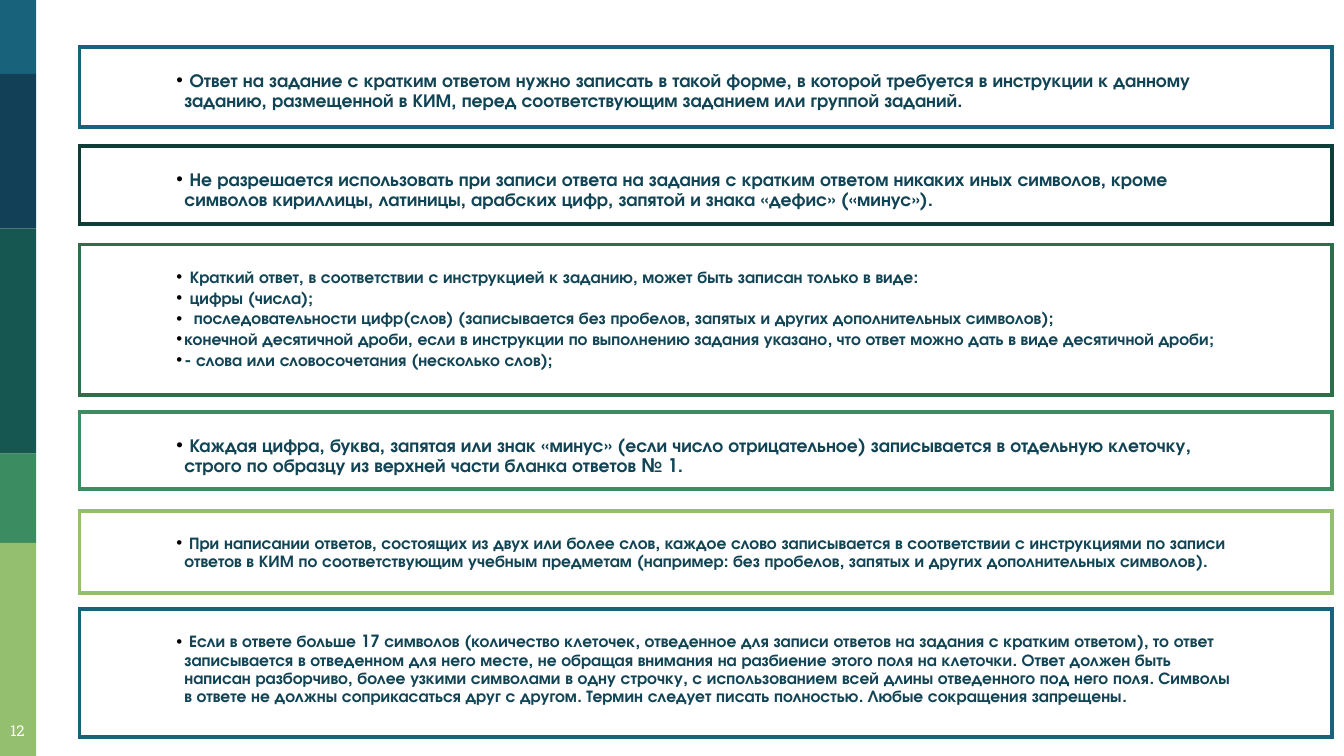
from dataclasses import dataclass
from itertools import pairwise

from lxml.etree import SubElement
from pptx import Presentation
from pptx.dml.color import RGBColor
from pptx.enum.shapes import MSO_SHAPE
from pptx.enum.text import MSO_ANCHOR, PP_ALIGN
from pptx.oxml.ns import qn
from pptx.util import Inches, Pt


@dataclass(frozen=True)
class Theme:
    """Colours, fonts and type sizes of the slide."""
    blue: str = "18637B"
    navy: str = "124057"
    teal: str = "165751"
    pine: str = "0F3D38"
    forest: str = "2E6E4B"
    green: str = "3B8D61"
    lime: str = "94BF6E"
    white: str = "FFFFFF"
    bullet: str = "000000"
    ink: str = "114454"
    body_font: str = "TeX Gyre Adventor"
    number_font: str = "Roboto Slab"
    bullet_font: str = "Arial"
    large: int = 10
    medium: int = 9
    small: int = 8


THEME = Theme()
COLUMNS, ROWS = 100, 56.25
SIDEBAR_WIDTH = 2.7
BOX_LEFT, BOX_WIDTH = 5.92, 93.2
HANG = 0.6

SIDEBAR_EDGES = [0, 5.5, 17, 33.75, 40.4, ROWS]
SIDEBAR_COLOURS = [THEME.blue, THEME.navy, THEME.teal, THEME.green, THEME.lime]

RULES = [
    (3.52, 5.95, THEME.blue, THEME.large, [
        (HANG, " Ответ на задание с кратким ответом нужно записать в такой форме, в которой требуется в инструкции к данному заданию, размещенной в КИМ, перед соответствующим заданием или группой заданий."),
    ]),
    (10.85, 5.85, THEME.pine, THEME.large, [
        (HANG, " Не разрешается использовать при записи ответа на задания с кратким ответом никаких иных символов, кроме символов кириллицы, латиницы, арабских цифр, запятой и знака «дефис» («минус»)."),
    ]),
    (18.2, 11.2, THEME.forest, THEME.medium, [
        (1, "Краткий ответ, в соответствии с инструкцией к заданию, может быть записан только в виде:"),
        (1, "цифры (числа);"),
        (1.3, "последовательности цифр(слов) (записывается без пробелов, запятых и других дополнительных символов);"),
        (HANG, "конечной десятичной дроби, если в инструкции по выполнению задания указано, что ответ можно дать в виде десятичной дроби;"),
        (HANG, "- слова или словосочетания (несколько слов);"),
    ]),
    (30.65, 5.75, THEME.green, THEME.large, [
        (HANG, " Каждая цифра, буква, запятая или знак «минус» (если число отрицательное) записывается в отдельную клеточку, строго по образцу из верхней части бланка ответов № 1."),
    ]),
    (38, 6.15, THEME.lime, THEME.medium, [
        (HANG, " При написании ответов, состоящих из двух или более слов, каждое слово записывается в соответствии с инструкциями по записи ответов в КИМ по соответствующим учебным предметам (например: без пробелов, запятых и других дополнительных символов)."),
    ]),
    (45.33, 9.5, THEME.blue, THEME.medium, [
        (HANG, " Если в ответе больше 17 символов (количество клеточек, отведенное для записи ответов на задания с кратким ответом), то ответ записывается в отведенном для него месте, не обращая внимания на разбиение этого поля на клеточки. Ответ должен быть написан разборчиво, более узкими символами в одну строчку, с использованием всей длины отведенного под него поля. Символы в ответе не должны соприкасаться друг с другом. Термин следует писать полностью. Любые сокращения запрещены."),
    ]),
]


def cells(count):
    """Return the length of a number of grid cells."""
    return Inches(count / 10)


def apply_format(target, values):
    """Set each named attribute of the target."""
    for name, value in values.items():
        setattr(target, name, value)


def add_panel(page, left, top, width, height, fill):
    """Add a plain filled rectangle placed on the grid."""
    panel = page.shapes.add_shape(MSO_SHAPE.RECTANGLE, *map(cells, (left, top, width, height)))
    panel.shadow.inherit = False
    panel.fill.solid()
    panel.fill.fore_color.rgb = RGBColor.from_string(fill)
    panel.line.fill.background()
    return panel


def add_span(para, text, size, font, colour, bold=False):
    """Add formatted text to a paragraph."""
    span = para.add_run()
    span.text = text
    apply_format(span.font, {"size": Pt(size), "name": font, "bold": bold})
    span.font.color.rgb = RGBColor.from_string(colour)


def add_bullet(para, indent):
    """Give a paragraph a hanging round bullet."""
    properties = para._p.get_or_add_pPr()
    properties.set("marL", str(cells(indent)))
    properties.set("indent", str(-cells(indent)))
    colour = SubElement(properties, qn("a:buClr"))
    SubElement(colour, qn("a:srgbClr"), val=THEME.bullet)
    SubElement(properties, qn("a:buFont"), typeface=THEME.bullet_font)
    SubElement(properties, qn("a:buChar"), char="•")


def outline_panel(panel, colour):
    """Give a panel a sharp outline and a slightly transparent fill."""
    panel.line.color.rgb = RGBColor.from_string(colour)
    panel.line.width = Pt(2)
    SubElement(panel.line._get_or_add_ln(), qn("a:miter"), lim="800000")
    fill_colour = panel._element.spPr.find(qn("a:solidFill"))[0]
    SubElement(fill_colour, qn("a:alpha"), val="90000")


def add_rule(page, top, height, colour, size, items):
    """Add an outlined box with its bulleted paragraphs."""
    box = add_panel(page, BOX_LEFT, top, BOX_WIDTH, height, THEME.white)
    outline_panel(box, colour)
    frame = box.text_frame
    apply_format(frame, {
        "word_wrap": True, "vertical_anchor": MSO_ANCHOR.TOP,
        "margin_left": cells(7.2), "margin_right": cells(7.2),
        "margin_top": cells(1.8), "margin_bottom": cells(0.6),
    })
    for index, (indent, text) in enumerate(items):
        para = frame.add_paragraph() if index else frame.paragraphs[0]
        apply_format(para, {
            "level": 1, "alignment": PP_ALIGN.LEFT, "line_spacing": 0.9,
            "space_before": Pt(0), "space_after": Pt(size * 0.15),
        })
        add_bullet(para, indent)
        add_span(para, text, size, THEME.body_font, THEME.ink, bold=True)


def add_sidebar(page):
    """Stack the coloured bands along the left edge."""
    for (top, bottom), colour in zip(pairwise(SIDEBAR_EDGES), SIDEBAR_COLOURS):
        add_panel(page, 0, top, SIDEBAR_WIDTH, bottom - top, colour)


def add_page_number(page, number):
    """Write the page number at the foot of the sidebar."""
    box = page.shapes.add_textbox(*map(cells, (-0.6, 52.75, 3.8, 3.5)))
    apply_format(box.text_frame, {
        "word_wrap": True, "margin_left": cells(1), "margin_right": cells(1),
        "margin_top": cells(1.3), "margin_bottom": cells(0.7),
    })
    para = box.text_frame.paragraphs[0]
    para.alignment = PP_ALIGN.CENTER
    add_span(para, number, THEME.small, THEME.number_font, THEME.white)


def main():
    """Build the slide and save the deck."""
    deck = Presentation()
    apply_format(deck, {"slide_width": cells(COLUMNS), "slide_height": cells(ROWS)})
    page = deck.slides.add_slide(deck.slide_layouts[6])
    add_sidebar(page)
    add_page_number(page, "12")
    for rule in RULES:
        add_rule(page, *rule)
    deck.save("out.pptx")


if __name__ == "__main__":
    main()
